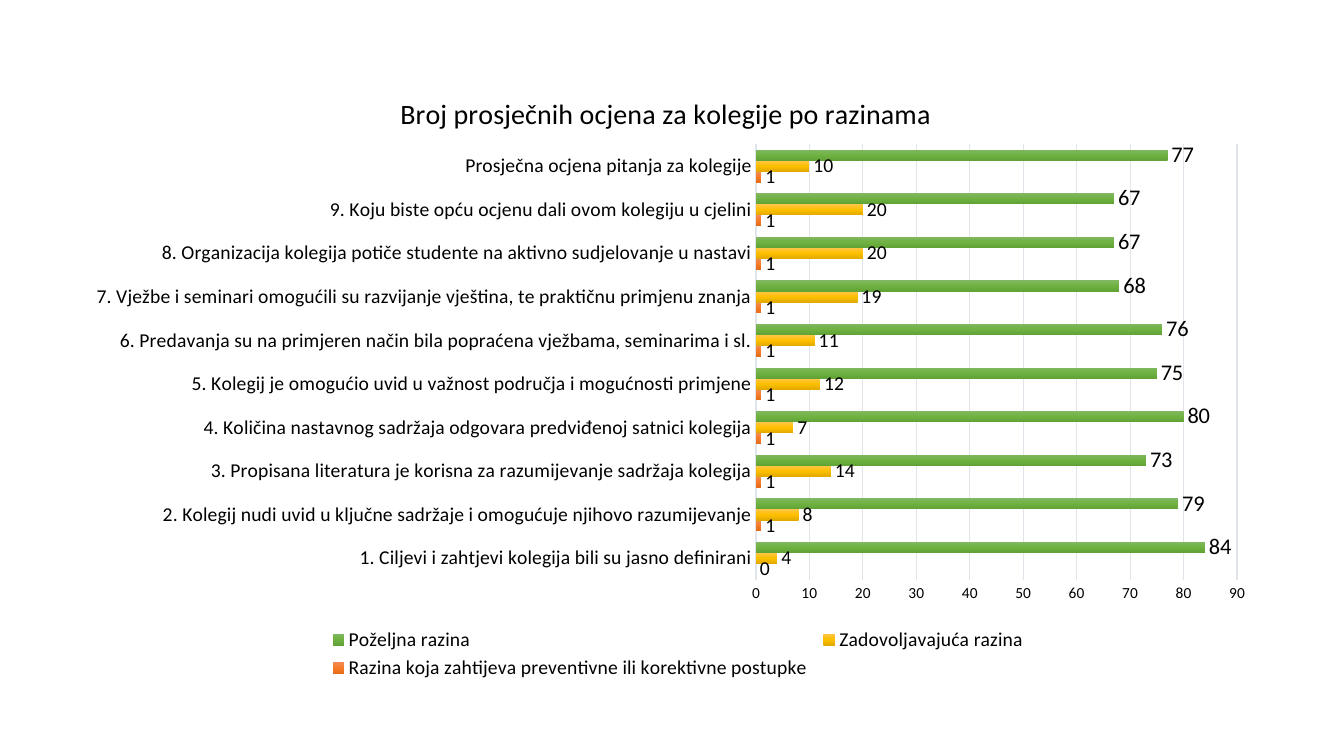
import lxml.etree
import pptx
import pptx.chart.data
import pptx.dml.color
import pptx.enum.chart
import pptx.oxml.ns
import pptx.util

Pt = pptx.util.Pt
qn = pptx.oxml.ns.qn

FONT = "Calibri"
BLACK = "000000"
GRID = "E0E5EB"

QUESTIONS = [
    "1. Ciljevi i zahtjevi kolegija bili su jasno definirani",
    "2. Kolegij nudi uvid u ključne sadržaje i omogućuje njihovo razumijevanje",
    "3. Propisana literatura je korisna za razumijevanje sadržaja kolegija",
    "4. Količina nastavnog sadržaja odgovara predviđenoj satnici kolegija",
    "5. Kolegij je omogućio uvid u važnost područja i mogućnosti primjene",
    "6. Predavanja su na primjeren način bila popraćena vježbama, seminarima i sl.",
    "7. Vježbe i seminari omogućili su razvijanje vještina, te praktičnu primjenu znanja",
    "8. Organizacija kolegija potiče studente na aktivno sudjelovanje u nastavi",
    "9. Koju biste opću ocjenu dali ovom kolegiju u cjelini",
    "Prosječna ocjena pitanja za kolegije",
]

LEVELS = [
    ("Razina koja zahtijeva preventivne ili korektivne postupke",
     [0, 1, 1, 1, 1, 1, 1, 1, 1, 1], ["F18C57", "F67B28", "E56C19"], 14),
    ("Zadovoljavajuća razina",
     [4, 8, 14, 7, 12, 11, 19, 20, 20, 10], ["FFC64B", "FFC000", "E3AB00"], 14),
    ("Poželjna razina",
     [84, 79, 73, 80, 75, 76, 68, 67, 67, 77], ["81B861", "6FB242", "62A336"], 16),
]


def rgb(color):
    return pptx.dml.color.RGBColor.from_string(color)


def style_font(font, size):
    font.name = FONT
    font.size = Pt(size)
    font.bold = False
    font.color.rgb = rgb(BLACK)


def style_line(line, color):
    line.width = Pt(0.75)
    line.color.rgb = rgb(color)


def add_child(parent, tag, **attributes):
    return lxml.etree.SubElement(parent, qn(tag), **attributes)


def place(owner, index, inner=False, **fractions):
    for earlier in owner.findall(qn("c:layout")):
        owner.remove(earlier)
    layout = add_child(owner, "c:layout")
    owner.insert(index, layout)
    manual = add_child(layout, "c:manualLayout")
    if inner:
        add_child(manual, "c:layoutTarget", val="inner")
    for mode in ("xMode", "yMode"):
        add_child(manual, f"c:{mode}", val="edge")
    for side, fraction in fractions.items():
        add_child(manual, f"c:{side}", val=str(fraction))


def fill_gradient(series, colors):
    properties = series.format.fill
    properties.gradient()
    properties.gradient_angle = 270
    stops = series._element.find(".//" + qn("a:gsLst"))
    for stop in list(stops):
        stops.remove(stop)
    for position, color in zip((0, 50000, 100000), colors):
        stop = add_child(stops, "a:gs", pos=str(position))
        add_child(stop, "a:srgbClr", val=color)


def style_level(series, colors, label_size):
    fill_gradient(series, colors)
    series.invert_if_negative = False
    labels = series.data_labels
    labels.show_value = True
    labels.position = pptx.enum.chart.XL_LABEL_POSITION.OUTSIDE_END
    style_font(labels.font, label_size)


def style_axes(chart):
    no_ticks = pptx.enum.chart.XL_TICK_MARK.NONE
    for axis, size in ((chart.category_axis, 14), (chart.value_axis, 11)):
        axis.major_tick_mark = no_ticks
        axis.minor_tick_mark = no_ticks
        style_font(axis.tick_labels.font, size)
    chart.category_axis.has_major_gridlines = False
    style_line(chart.category_axis.format.line, GRID)
    scores = chart.value_axis
    scores.minimum_scale = 0
    scores.maximum_scale = 90
    scores.major_unit = 10
    scores.format.line.fill.background()
    scores.has_major_gridlines = True
    style_line(scores.major_gridlines.format.line, GRID)


def add_title(chart, wording):
    chart.has_title = True
    heading = chart.chart_title
    run = heading.text_frame.paragraphs[0].add_run()
    run.text = wording
    style_font(run.font, 20)
    heading.include_in_layout = False
    place(heading._element, 1, x=0.27, y=0.03)


def add_legend(chart):
    chart.has_legend = True
    legend = chart.legend
    legend.position = pptx.enum.chart.XL_LEGEND_POSITION.BOTTOM
    legend.include_in_layout = False
    style_font(legend.font, 14)
    place(legend._element, 1, x=0.21, y=0.9, w=0.59, h=0.1)


def add_ratings_chart(slide):
    ratings = pptx.chart.data.CategoryChartData(number_format="General")
    ratings.categories = QUESTIONS
    for name, counts, _, _ in LEVELS:
        ratings.add_series(name, counts)
    chart = slide.shapes.add_chart(
        pptx.enum.chart.XL_CHART_TYPE.BAR_CLUSTERED,
        Pt(50.4), Pt(50.4), Pt(859), Pt(438.5), ratings).chart
    style_font(chart.font, 10)
    plot = chart.plots[0]
    plot.gap_width = 100
    plot.overlap = 0
    plot.vary_by_categories = False
    for series, (_, _, colors, label_size) in zip(plot.series, LEVELS):
        style_level(series, colors, label_size)
    style_axes(chart)
    add_title(chart, "Broj prosječnih ocjena za kolegije po razinama")
    add_legend(chart)
    plot_area = chart._chartSpace.find(".//" + qn("c:plotArea"))
    place(plot_area, 0, inner=True, x=0.57, y=0.12, w=0.4, h=0.71)


def main():
    presentation = pptx.Presentation()
    presentation.slide_width = Pt(960)
    presentation.slide_height = Pt(540)
    slide = presentation.slides.add_slide(presentation.slide_layouts[6])
    add_ratings_chart(slide)
    presentation.save("out.pptx")


if __name__ == "__main__":
    main()
